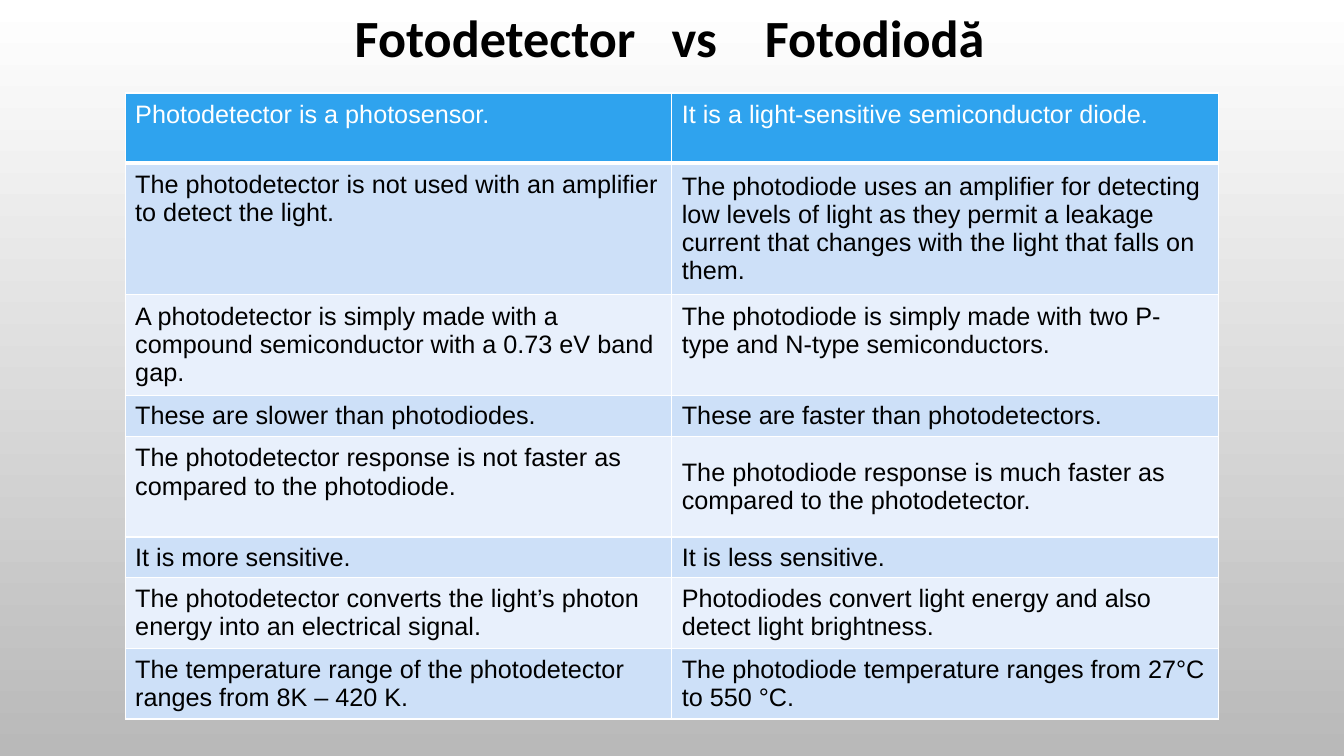
from dataclasses import dataclass

from lxml.etree import SubElement
from pptx import Presentation
from pptx.dml.color import RGBColor
from pptx.enum.text import MSO_ANCHOR, MSO_AUTO_SIZE, PP_ALIGN
from pptx.oxml.ns import qn
from pptx.util import Pt


@dataclass(frozen=True)
class Theme:
    title_font: str = "Calibri"
    body_font: str = "Arial"
    title_size: float = 37.3
    body_size: float = 18
    text: str = "000000"
    white: str = "FFFFFF"
    header: str = "2FA3EE"
    bands: tuple = ("CDE0F8", "E8F0FC")
    background: tuple = ("FFFFFF", "B9B9B9")


TITLE_PARTS = ["Fotodetector", "vs", "Fotodiodă"]
TITLE_TABS = [226.4, 292.9]

TOP, MIDDLE = MSO_ANCHOR.TOP, MSO_ANCHOR.MIDDLE

# Row height, then text and anchor of the photodetector and photodiode cells
COMPARISON = [
    (50, ("Photodetector is a photosensor.", TOP),
     ("It is a light-sensitive semiconductor diode.", TOP)),
    (94, ("The photodetector is not used with an amplifier to detect the light.", TOP),
     ("The photodiode uses an amplifier for detecting low levels of light as they "
      "permit a leakage current that changes with the light that falls on them.", MIDDLE)),
    (72, ("A photodetector is simply made with a compound semiconductor "
          "with a 0.73 eV band gap.", MIDDLE),
     ("The photodiode is simply made with two P-type and N-type semiconductors.", TOP)),
    (29.2, ("These are slower than photodiodes.", MIDDLE),
     ("These are faster than photodetectors.", MIDDLE)),
    (72, ("The photodetector response is not faster as compared to the photodiode.", TOP),
     ("The photodiode response is much faster as compared to the photodetector.", MIDDLE)),
    (29.2, ("It is more sensitive.", MIDDLE),
     ("It is less sensitive.", MIDDLE)),
    (50.4, ("The photodetector converts the light’s photon energy "
            "into an electrical signal.", MIDDLE),
     ("Photodiodes convert light energy and also detect light brightness.", MIDDLE)),
    (50.4, ("The temperature range of the photodetector ranges from 8K – 420 K.", MIDDLE),
     ("The photodiode temperature ranges from 27°C to 550 °C.", MIDDLE)),
]


class SlideBuilder:
    def __init__(self, slide, theme):
        self.slide = slide
        self.theme = theme

    def background(self):
        fill = self.slide.background.fill
        fill.gradient()
        fill.gradient_angle = 270
        for stop, color in zip(fill.gradient_stops, self.theme.background):
            stop.color.rgb = RGBColor.from_string(color)

    def span(self, para, text, font, size, color, bold=False):
        span = para.add_run()
        span.text = text
        span.font.name = font
        span.font.size = Pt(size)
        span.font.bold = bold
        span.font.color.rgb = RGBColor.from_string(color)

    def title(self, parts, tabs, left, top, width, height):
        """Set the title with each part after the first at its own tab stop."""
        box = self.slide.shapes.title
        box.left, box.top, box.width, box.height = map(Pt, (left, top, width, height))
        frame = box.text_frame
        frame.word_wrap = True
        frame.auto_size = MSO_AUTO_SIZE.NONE
        frame.vertical_anchor = TOP
        frame.margin_left, frame.margin_right = Pt(7.2), 0
        frame.margin_top = frame.margin_bottom = Pt(3.6)
        para = frame.paragraphs[0]
        para.alignment = PP_ALIGN.LEFT
        para.line_spacing = 1.0
        para.space_before = Pt(0)
        tab_list = SubElement(para._p.get_or_add_pPr(), qn("a:tabLst"))
        for position in tabs:
            SubElement(tab_list, qn("a:tab"), pos=str(Pt(position)), algn="l")
        theme = self.theme
        for index, part in enumerate(parts):
            self.span(para, "\t" + part if index else part, theme.title_font,
                      theme.title_size, theme.text, bold=True)

    def borders(self, cell, widths):
        properties = cell._tc.get_or_add_tcPr()
        for index, (side, width) in enumerate(widths.items()):
            line = SubElement(properties, qn("a:ln" + side), w=str(Pt(width)))
            fill = SubElement(line, qn("a:solidFill"))
            SubElement(fill, qn("a:srgbClr"), val=self.theme.white)
            properties.insert(index, line)

    def cell(self, cell, text, anchor, fill, color):
        cell.fill.solid()
        cell.fill.fore_color.rgb = RGBColor.from_string(fill)
        cell.vertical_anchor = anchor
        cell.margin_left = cell.margin_right = Pt(7.2)
        cell.margin_top = Pt(5.6 if anchor == TOP else 3.6)
        cell.margin_bottom = Pt(3.6)
        self.span(cell.text_frame.paragraphs[0], text,
                  self.theme.body_font, self.theme.body_size, color)

    def table(self, rows, left, top, width):
        height = sum(row[0] for row in rows)
        table = self.slide.shapes.add_table(
            len(rows), 2, Pt(left), Pt(top), Pt(width), Pt(height)).table
        for column in table.columns:
            column.width = Pt(width / 2)
        theme = self.theme
        for r, (row_height, *entries) in enumerate(rows):
            table.rows[r].height = Pt(row_height)
            fill = theme.bands[(r - 1) % 2] if r else theme.header
            color = theme.text if r else theme.white
            widths = {"L": 1, "R": 1, "T": 3 if r == 1 else 1, "B": 1 if r else 3}
            for c, (text, anchor) in enumerate(entries):
                cell = table.cell(r, c)
                self.cell(cell, text, anchor, fill, color)
                self.borders(cell, widths)


def main():
    deck = Presentation()
    deck.slide_width, deck.slide_height = Pt(960), Pt(540)
    page = SlideBuilder(deck.slides.add_slide(deck.slide_layouts[5]), Theme())
    page.background()
    page.title(TITLE_PARTS, TITLE_TABS, 246.2, 0, 467.3, 52.6)
    page.table(COMPARISON, 89.4, 66.4, 781)
    deck.save("out.pptx")


if __name__ == "__main__":
    main()
